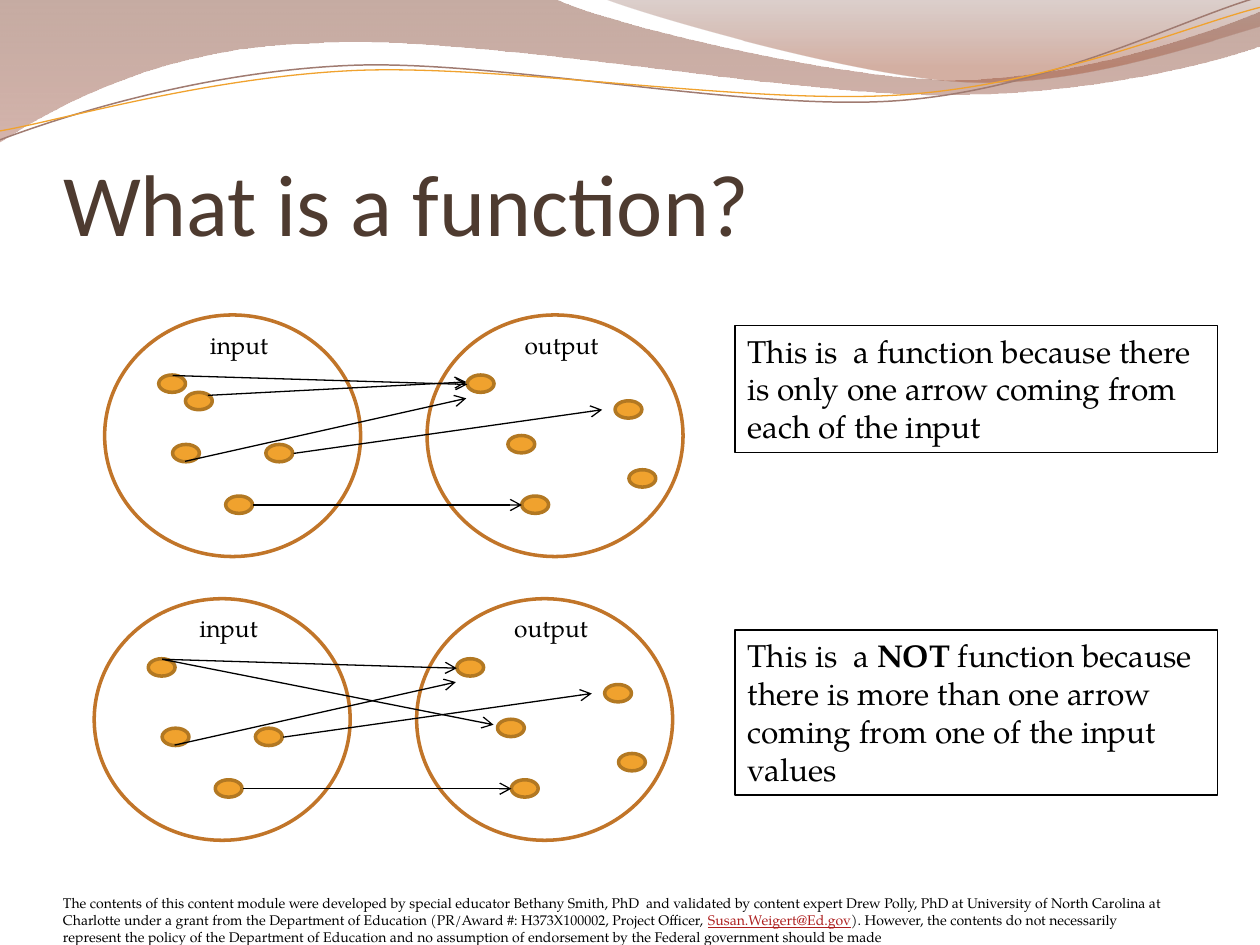
from lxml.etree import Element, SubElement
from pptx import Presentation
from pptx.dml.color import RGBColor
from pptx.enum.shapes import MSO_CONNECTOR, MSO_SHAPE
from pptx.enum.text import MSO_ANCHOR, MSO_AUTO_SIZE, PP_ALIGN
from pptx.oxml.ns import qn
from pptx.util import Cm, Pt

HUES = {
    "black": "000000", "white": "FFFFFF", "title": "4E3B30", "link": "AD1F1F",
    "ring": "C17529", "dot": "F0A22E", "rim": "B27822", "mauve": "A07B71",
    "rust": "814733", "rose": "B17667", "clay": "8C6359", "brick": "A15135",
}
RGB = {name: RGBColor.from_string(code) for name, code in HUES.items()}
SERIF = "TeX Gyre Pagella"


def trim(shape, fill, line, width):
    """Set solid fill and outline; None leaves either one out."""
    shape.shadow.inherit = False
    if fill:
        shape.fill.solid()
        shape.fill.fore_color.rgb = RGB[fill]
    else:
        shape.fill.background()
    if line:
        shape.line.color.rgb = RGB[line]
        shape.line.width = Pt(width)
    else:
        shape.line.fill.background()


def write(frame, runs, size, font=SERIF, align=PP_ALIGN.LEFT):
    """Add runs of (text, hue, bold, underline) to the first paragraph."""
    frame.word_wrap = True
    para = frame.paragraphs[0]
    para.alignment = align
    for text, hue, bold, under in runs:
        run = para.add_run()
        run.text = text
        run.font.name = font
        run.font.size = Pt(size)
        run.font.color.rgb = RGB[hue]
        run.font.bold = bold
        run.font.underline = under


deck = Presentation()
deck.slide_width, deck.slide_height = Cm(25.4), Cm(19.05)
slide = deck.slides.add_slide(deck.slide_layouts[5])
shapes = slide.shapes

# Header waves: start point, then lines (2 numbers) and curves (6 numbers);
# shades are (position, hue, opacity in percent)
waves = [
    ([(0, 0), (11.18, -0.03), (12.09, 0.43, 16.87, 1.6, 19.25, 1.6),
      (21.67, 1.6, 24.33, 0.66, 25.4, 0.23), (25.43, 0.91),
      (24.97, 1.12, 22.1, 1.93, 18.95, 1.91),
      (15.8, 1.91, 9.7, 0.71, 6.53, 0.86),
      (3.28, 0.91, 1.17, 2.11, -0.03, 2.87)],
     [(0, "rust", 45), (1, "rose", 55)], None, 0),
    ([(12.17, -0.03), (12.93, 0.28, 17.32, 1.57, 19.53, 1.65),
      (21.74, 1.75, 24.41, 0.81, 25.4, 0.53), (25.4, 0)],
     [(0, "clay", 30), (0.8, "brick", 45)], None, 0),
    ([(0, 2.82), (1.22, 2.36, 4.01, 1.45, 7.04, 1.32),
      (10.03, 1.19, 15.06, 2.26, 18.11, 2.03),
      (21.16, 1.8, 23.83, 0.38, 25.35, -0.05)], None, "mauve", 0.85),
    ([(0, 2.64), (1.19, 2.44, 4.17, 1.55, 7.19, 1.42),
      (10.24, 1.3, 15.16, 2.13, 18.21, 1.91),
      (21.23, 1.7, 23.9, 0.53, 25.4, 0.15)], None, "dot", 0.75),
]
for parts, shades, line, width in waves:
    ends = [(Cm(part[-2]), Cm(part[-1])) for part in parts]
    pen = shapes.build_freeform(*ends[0])
    pen.add_line_segments(ends[1:], close=bool(shades))
    wave = pen.convert_to_shape()
    # Bend the segments that have control points
    sides = list(wave._element.spPr.iter(qn("a:lnTo")))
    for side, part in zip(sides, parts[1:]):
        if len(part) == 6:
            side.tag = qn("a:cubicBezTo")
            for spot in range(2):
                x, y = part[2 * spot:2 * spot + 2]
                side.insert(spot, Element(qn("a:pt"), x=str(Cm(x) - wave.left),
                                          y=str(Cm(y) - wave.top)))
    trim(wave, None, line, width)
    if shades:
        wave.fill.gradient()
        wave.fill.gradient_angle = 270
        for stop, (spot, hue, alpha) in zip(wave.fill.gradient_stops, shades):
            stop.position = spot
            stop.color.rgb = RGB[hue]
        for tint, shade in zip(wave._element.spPr.iter(qn("a:srgbClr")), shades):
            SubElement(tint, qn("a:alpha"), val=str(shade[2] * 1000))

# Title
title = shapes.title
title.left, title.top, title.width, title.height = Cm(1.27), Cm(1.95), Cm(22.86), Cm(3.18)
frame = title.text_frame
frame.auto_size = MSO_AUTO_SIZE.NONE
frame.vertical_anchor = MSO_ANCHOR.BOTTOM
frame.margin_left = frame.margin_right = frame.margin_bottom = 0
frame.margin_top = Cm(0.13)
write(frame, [("What is a function?", "title", False, False)], 50, "Calibri")

# Mapping diagrams: both share most dots and arrows
dots = [(3.2, 7.56), (3.48, 8.96), (5.36, 8.96), (4.55, 10), (9.42, 7.56),
        (10.24, 8.78), (12.4, 8.08), (12.68, 9.47), (10.52, 10)]
links = [(3.48, 7.57, 9.42, 7.75), (5.92, 9.14, 12.14, 8.26),
         (3.73, 9.3, 9.4, 8.03), (5.11, 10.18, 10.52, 10.18)]
maps = [
    (0, 0, [(3.74, 7.91)], (4.19, 7.97, 9.4, 7.7)),
    (-0.21, 5.72, [], (3.48, 7.57, 10.16, 8.89)),
]
for dx, dy, more, link in maps:
    group = shapes.add_group_shape().shapes
    for col in range(2):
        ring = group.add_shape(MSO_SHAPE.OVAL, Cm(2.11 + 6.5 * col + dx),
                               Cm(6.35 + dy), Cm(5.16), Cm(4.87))
        trim(ring, "white", "ring", 2)
    for col, name in enumerate(["input", "output"]):
        label = group.add_textbox(Cm(2.93 + 6.5 * col + dx), Cm(6.52 + dy),
                                  Cm(3.78), Cm(0.71))
        write(label.text_frame, [(name, "black", False, False)], 14,
              align=PP_ALIGN.CENTER)
    for x, y in dots + more:
        dot = group.add_shape(MSO_SHAPE.FLOWCHART_CONNECTOR, Cm(x + dx),
                              Cm(y + dy), Cm(0.54), Cm(0.35))
        trim(dot, "dot", "rim", 2)
    for x, y, to_x, to_y in links + [link]:
        arrow = group.add_connector(MSO_CONNECTOR.STRAIGHT, Cm(x + dx), Cm(y + dy),
                                    Cm(to_x + dx), Cm(to_y + dy))
        arrow.line.color.rgb = RGB["black"]
        arrow.line.width = Pt(0.75)
        props = arrow._element.spPr
        SubElement(props.find(qn("a:ln")), qn("a:tailEnd"), type="arrow")
        SubElement(props, qn("a:effectLst"))

# Explanations
notes = [
    (6.56, 2.57, [("This is  a function because there is only one arrow coming "
                   "from each of the input", "black", False, False)]),
    (12.7, 3.33, [("This is  a ", "black", False, False),
                  ("NOT", "black", True, False),
                  (" function because there is more than one arrow coming "
                   "from one of the input values", "black", False, False)]),
]
for top, high, runs in notes:
    box = shapes.add_textbox(Cm(14.82), Cm(top), Cm(9.73), Cm(high))
    trim(box, None, "black", 0.75)
    box.text_frame.auto_size = MSO_AUTO_SIZE.SHAPE_TO_FIT_TEXT
    write(box.text_frame, runs, 18)

# Credit line
foot = shapes.add_textbox(Cm(1.27), Cm(18.03), Cm(22.43), Cm(1.02)).text_frame
foot.margin_left = foot.margin_right = foot.margin_top = foot.margin_bottom = 0
foot.vertical_anchor = MSO_ANCHOR.BOTTOM
write(foot, [
    ("The contents of this content module were developed by special educator "
     "Bethany Smith, PhD  and validated by content expert Drew Polly, PhD at "
     "University of North Carolina at Charlotte under a grant from the Department "
     "of Education (PR/Award #: H373X100002, Project Officer, ", "black", False, False),
    ("Susan.Weigert@Ed.gov", "link", False, True),
    ("). However, the contents do not necessarily represent the policy of the "
     "Department of Education and no assumption of endorsement by the Federal "
     "government should be made", "black", False, False),
], 8)

deck.save("out.pptx")
